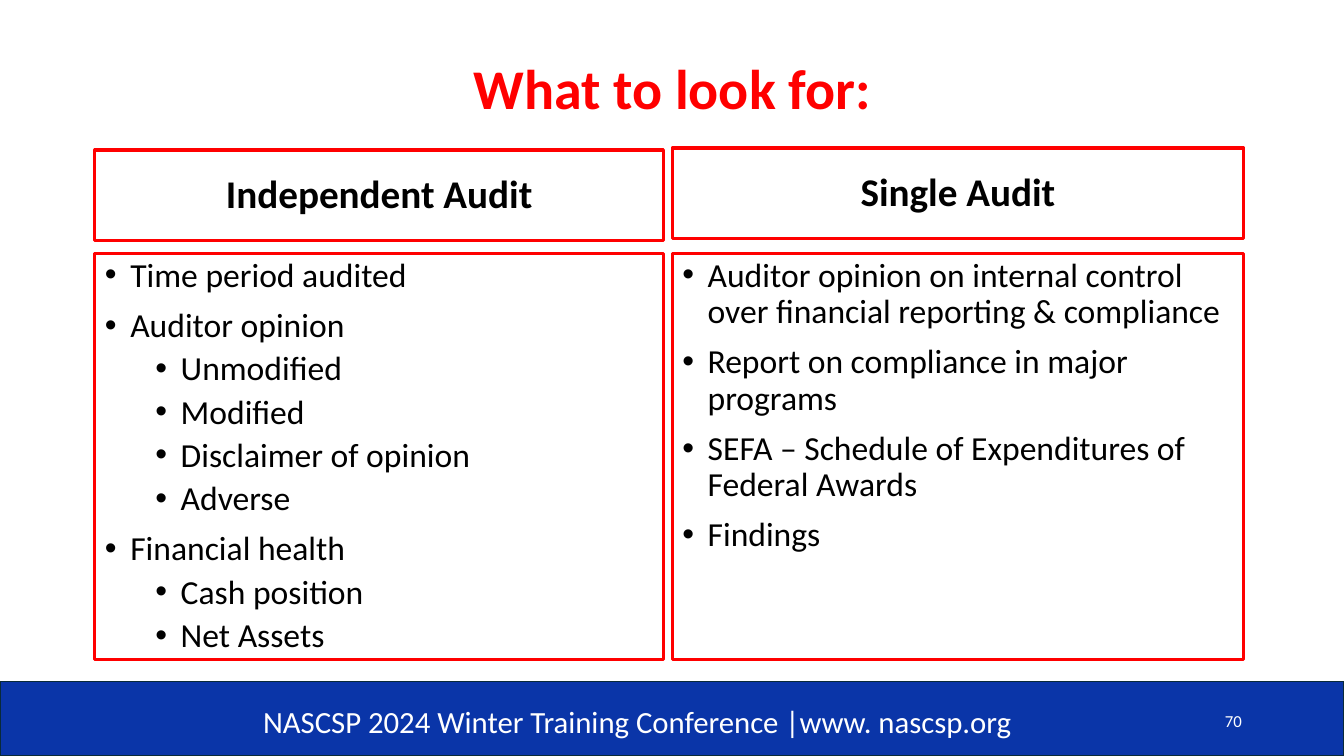
from dataclasses import dataclass
from typing import NamedTuple

from lxml.etree import SubElement
from pptx import Presentation
from pptx.dml.color import RGBColor
from pptx.enum.shapes import MSO_SHAPE
from pptx.enum.text import MSO_ANCHOR as Anchor, MSO_AUTO_SIZE as AutoSize, PP_ALIGN as Align
from pptx.oxml.ns import qn
from pptx.util import Cm, Pt

COLORS = {
    "accent": "FF0000",
    "text": "000000",
    "band": "0A35A8",
    "band_line": "092A39",
    "footer": "FFFFFF",
}
FONT = "Calibri"
HEADING_HEIGHT = 2.29
LIST_TOP, LIST_HEIGHT = 6.38, 10.24


class Item(NamedTuple):
    text: str
    level: int = 0


@dataclass
class AuditColumn:
    heading: str
    items: list[Item]
    left: float
    width: float
    heading_top: float
    heading_index: int
    list_index: int


COLUMNS = [
    AuditColumn("Independent Audit", [
        Item("Time period audited"),
        Item("Auditor opinion"),
        Item("Unmodified", 1),
        Item("Modified", 1),
        Item("Disclaimer of opinion", 1),
        Item("Adverse", 1),
        Item("Financial health"),
        Item("Cash position", 1),
        Item("Net Assets", 1),
    ], 2.39, 14.33, 3.78, 1, 2),
    AuditColumn("Single Audit", [
        Item("Auditor opinion on internal control over financial reporting & compliance"),
        Item("Report on compliance in major programs"),
        Item("SEFA – Schedule of Expenditures of Federal Awards"),
        Item("Findings"),
    ], 16.94, 14.4, 3.73, 3, 4),
]


def color(name: str) -> RGBColor:
    return RGBColor.from_string(COLORS[name])


def place(shape, left: float, top: float, width: float, height: float) -> None:
    shape.left, shape.top = Cm(left), Cm(top)
    shape.width, shape.height = Cm(width), Cm(height)


def outline(shape) -> None:
    shape.line.color.rgb = color("accent")
    shape.line.width = Pt(2.25)


def format_runs(paragraph, size: float, color_name: str, bold: bool = False) -> None:
    for run in paragraph.runs:
        run.font.name = FONT
        run.font.size = Pt(size)
        run.font.bold = bold
        run.font.color.rgb = color(color_name)


def write_line(shape, text: str, size: float, color_name: str, align: Align,
               anchor: Anchor, bold: bool = False, line_spacing: float = 1.0) -> None:
    """Fill a shape with one formatted paragraph."""
    frame = shape.text_frame
    frame.text = text
    frame.word_wrap = True
    frame.auto_size = AutoSize.NONE
    frame.vertical_anchor = anchor
    paragraph = frame.paragraphs[0]
    paragraph.alignment = align
    paragraph.line_spacing = line_spacing
    paragraph.space_before = Pt(0)
    format_runs(paragraph, size, color_name, bold)


def add_bullet(paragraph, level: int) -> None:
    properties = paragraph._p.get_or_add_pPr()
    properties.set("marL", str(Cm(0.64 + 1.27 * level)))
    properties.set("indent", str(-Cm(0.64)))
    SubElement(properties, qn("a:buFont"), typeface="Arial")
    SubElement(properties, qn("a:buChar"), char="•")


def write_list(shape, items: list[Item]) -> None:
    frame = shape.text_frame
    frame.word_wrap = True
    frame.auto_size = AutoSize.NONE
    frame.vertical_anchor = Anchor.TOP
    for position, item in enumerate(items):
        paragraph = frame.add_paragraph() if position else frame.paragraphs[0]
        paragraph.text = item.text
        paragraph.level = item.level
        add_bullet(paragraph, item.level)
        paragraph.line_spacing = 0.9
        paragraph.space_before = Pt((5 if item.level else 10) if position else 0)
        format_runs(paragraph, 24, "text")


def add_column(slide, column: AuditColumn) -> None:
    heading = slide.placeholders[column.heading_index]
    place(heading, column.left, column.heading_top, column.width, HEADING_HEIGHT)
    outline(heading)
    write_line(heading, column.heading, 28, "text", Align.CENTER, Anchor.MIDDLE, True, 0.9)

    body = slide.placeholders[column.list_index]
    place(body, column.left, LIST_TOP, column.width, LIST_HEIGHT)
    outline(body)
    write_list(body, column.items)


def add_footer(slide) -> None:
    band = slide.shapes.add_shape(MSO_SHAPE.RECTANGLE, Cm(0), Cm(17.17), Cm(33.87), Cm(1.88))
    band.shadow.inherit = False
    band.fill.solid()
    band.fill.fore_color.rgb = color("band")
    band.line.color.rgb = color("band_line")
    band.line.width = Pt(1)

    conference = slide.shapes.add_textbox(Cm(6.38), Cm(17.58), Cm(21.13), Cm(1.19))
    write_line(conference, "NASCSP 2024 Winter Training Conference |www. nascsp.org",
               22, "footer", Align.LEFT, Anchor.TOP)
    page_number = slide.shapes.add_textbox(Cm(23.93), Cm(17.65), Cm(7.62), Cm(1.02))
    write_line(page_number, "70", 12, "footer", Align.RIGHT, Anchor.MIDDLE)


def main() -> None:
    presentation = Presentation()
    presentation.slide_width, presentation.slide_height = Cm(33.87), Cm(19.05)
    comparison_layout = presentation.slide_layouts[4]
    slide = presentation.slides.add_slide(comparison_layout)

    title = slide.shapes.title
    place(title, 2.34, 0.46, 29.21, 3.68)
    write_line(title, "What to look for:", 40, "accent", Align.CENTER, Anchor.MIDDLE, True, 0.9)
    for column in COLUMNS:
        add_column(slide, column)
    add_footer(slide)
    presentation.save("out.pptx")


if __name__ == "__main__":
    main()
